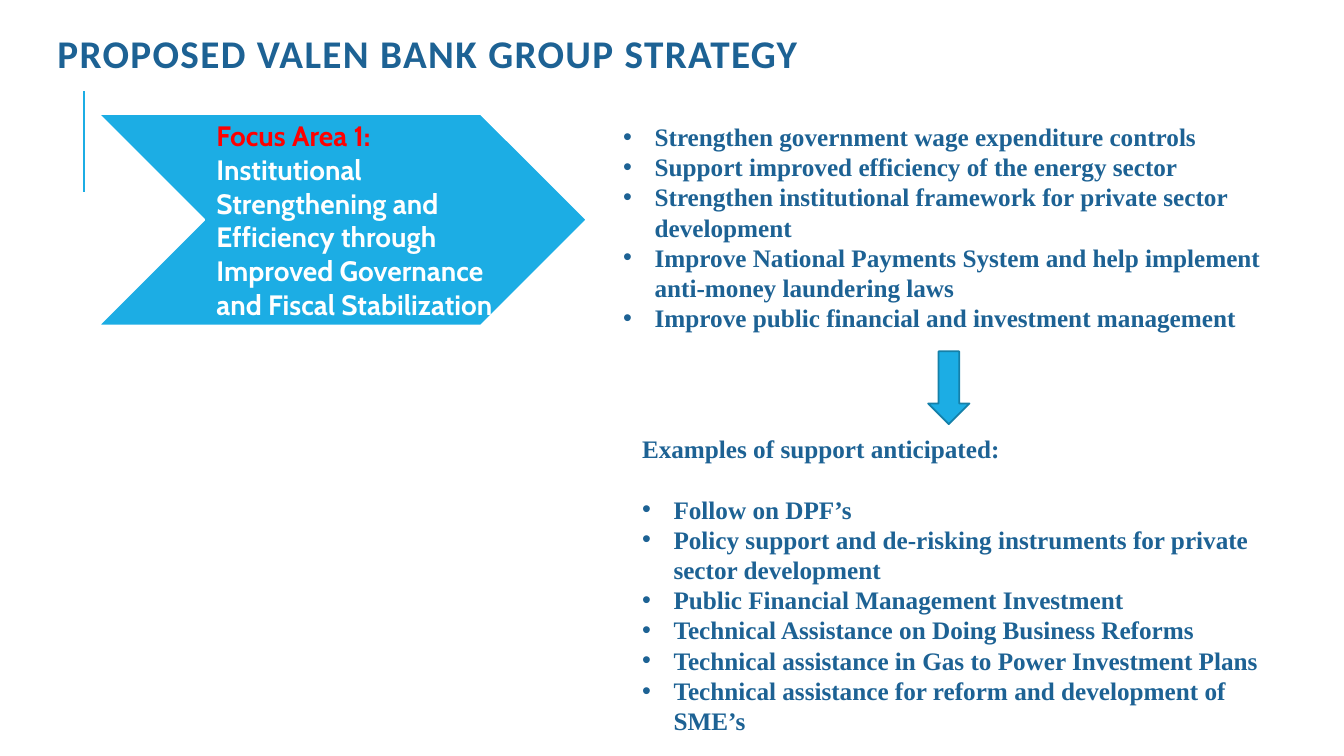
from pptx import Presentation
from pptx import util as u
from pptx.dml import color
from pptx.enum import shapes, text
from pptx.oxml import xmlchemy
from lxml import etree


class Deck:
    COLORS = {"navy": "1D6294", "blue": "1CADE4", "edge": "1580A9",
              "red": "FF0000", "white": "FFFFFF"}
    SERIF, HEADING, LABEL = "Times New Roman", "Calibri", "Cabin"
    INDENT = 22.5

    def __init__(self):
        self.prs = Presentation()
        self.prs.slide_width, self.prs.slide_height = u.Pt(960), u.Pt(540)
        self.s = self.prs.slides.add_slide(self.prs.slide_layouts[6])

    def rgb(self, name):
        return color.RGBColor.from_string(self.COLORS[name])

    def add_ns(self, parent, tag, **attrs):
        el = etree.SubElement(parent, xmlchemy.qn(tag))
        for key, value in attrs.items():
            el.set(key, value)

    def line(self, x1, y1, x2, y2):
        cn = self.s.shapes.add_connector(shapes.MSO_CONNECTOR.STRAIGHT,
                                         *map(u.Pt, (x1, y1, x2, y2)))
        cn.line.color.rgb, cn.line.width = self.rgb("blue"), u.Pt(1.5)
        self.add_ns(cn._element.spPr, "a:effectLst")

    def shape(self, kind, box, edge):
        sp = self.s.shapes.add_shape(kind, *map(u.Pt, box))
        sp.shadow.inherit = False
        sp.fill.solid()
        sp.fill.fore_color.rgb = self.rgb("blue")
        sp.line.color.rgb, sp.line.width = self.rgb(edge), u.Pt(1.25)

    def text(self, box, lines, font, size, hue="navy", middle=False,
             insets=(7.2, 3.6, 7.2, 3.6)):
        tf = self.s.shapes.add_textbox(*map(u.Pt, box)).text_frame
        tf.word_wrap = True
        tf.margin_left, tf.margin_top, tf.margin_right, tf.margin_bottom = map(u.Pt, insets)
        if middle:
            tf.vertical_anchor = text.MSO_ANCHOR.MIDDLE
        tf.text = "\n".join(lines)
        for p in tf.paragraphs:
            f = p.runs[0].font
            f.name, f.size, f.bold = font, u.Pt(size), True
            f.color.rgb = self.rgb(hue)
        return tf.paragraphs

    def title(self, box, words):
        p, = self.text(box, [words], self.HEADING, 28, middle=True)
        p.line_spacing = 0.8
        p.runs[0].font._element.set("spc", "100")

    def bullets(self, box, items, heading=None):
        ps = self.text(box, ([heading] if heading else []) + items, self.SERIF, 18)
        if heading:
            ps[0].space_after = u.Pt(21.6)
            ps = ps[1:]
        for p in ps:
            pPr = p._p.get_or_add_pPr()
            pPr.set("marL", str(u.Pt(self.INDENT)))
            pPr.set("indent", str(-u.Pt(self.INDENT)))
            self.add_ns(pPr, "a:buFont", typeface="Arial")
            self.add_ns(pPr, "a:buChar", char="•")

    def focus(self, box, label, words):
        ps = self.text(box, [label, words], self.LABEL, 20, "white", True, (2, 1, 0, 1))
        ps[0].runs[0].font.color.rgb = self.rgb("red")


def main():
    d = Deck()
    d.line(60, 137, 60, 65)
    d.title((34, 1, 917, 80), "PROPOSED VALEN BANK GROUP STRATEGY")
    d.shape(shapes.MSO_SHAPE.CHEVRON, (70.5, 81.5, 348.5, 151), "white")
    d.focus((152.6, 81.5, 209.5, 151), "Focus Area 1:",
            "Institutional Strengthening and Efficiency through "
            "Improved Governance and Fiscal Stabilization")
    d.bullets((451.5, 306, 480, 247), [
        "Follow on DPF’s",
        "Policy support and de-risking instruments for private sector development",
        "Public Financial Management Investment",
        "Technical Assistance on Doing Business Reforms",
        "Technical assistance in Gas to Power Investment Plans",
        "Technical assistance for reform and development of SME’s",
    ], heading="Examples of support anticipated:")
    d.bullets((438, 83, 480, 181.5), [
        "Strengthen government wage expenditure controls",
        "Support improved efficiency of the energy sector",
        "Strengthen institutional framework for private sector development",
        "Improve National Payments System and help implement anti-money laundering laws",
        "Improve public financial and investment management",
    ])
    d.shape(shapes.MSO_SHAPE.DOWN_ARROW, (663, 251, 29.5, 52), "edge")
    d.prs.save("out.pptx")


if __name__ == "__main__":
    main()
